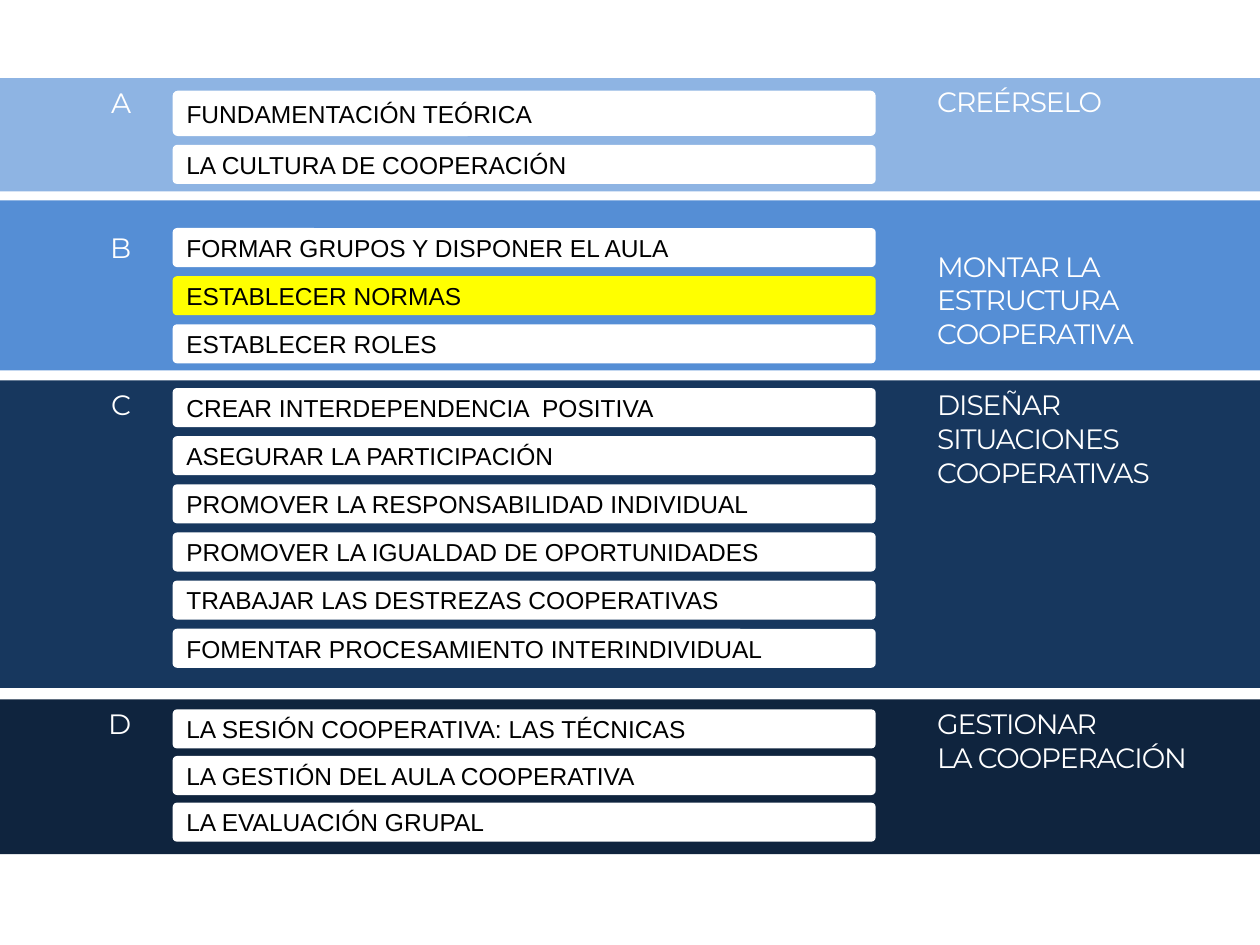
"""Build the slide of four cooperative learning stages, A to D."""
from pptx import Presentation
from pptx.dml.color import RGBColor
from pptx.enum.shapes import MSO_SHAPE as Kind
from pptx.enum.text import MSO_ANCHOR as Anchor, MSO_AUTO_SIZE as Fit, PP_ALIGN as Align
from pptx.util import Inches, Pt


def paint(fill, tone):
    fill.solid()
    fill.fore_color.rgb = RGBColor.from_string(tone)


def write(shape, lines, align, tone, track, frame, font):
    body = shape.text_frame
    for key, value in frame.items():
        setattr(body, key, value)
    for index, line in enumerate(lines):
        para = body.add_paragraph() if index else body.paragraphs[0]
        para.alignment = align
        run = para.add_run()
        run.text = line
        run._r.get_or_add_rPr().set("spc", str(track))
        for key, value in font.items():
            setattr(run.font, key, value)
        paint(run.font.fill, tone)


deck = Presentation()
deck.slide_width, deck.slide_height = Inches(10), Inches(7.5)
col, row = deck.slide_width / 100, deck.slide_height / 75
slide = deck.slides.add_slide(deck.slide_layouts[6])

head = {
    "frame": {"word_wrap": True, "auto_size": Fit.SHAPE_TO_FIT_TEXT},
    "font": {"name": "Montserrat", "size": Pt(16)},
    "tone": "FFFFFF", "track": -60,
}
item = {
    "frame": {"word_wrap": True, "vertical_anchor": Anchor.MIDDLE,
              "margin_right": Inches(0.24)},
    "font": {"name": "Arial", "size": Pt(14)},
    "tone": "000000", "track": 0,
}
mark = "ESTABLECER NORMAS"

bands = [
    {"name": "A", "top": 6.2, "tall": 9, "tone": "8EB4E3",
     "tag": 6.3, "side": 6.2, "start": 7.2, "first": 3.6, "gap": 0.7,
     "title": ["CREÉRSELO"],
     "items": ["FUNDAMENTACIÓN TEÓRICA", "LA CULTURA DE COOPERACIÓN"]},
    {"name": "B", "top": 15.9, "tall": 13.5, "tone": "558ED5",
     "tag": 17.8, "side": 19.3, "start": 18.1, "first": 3.1, "gap": 0.72,
     "title": ["MONTAR LA", "ESTRUCTURA", "COOPERATIVA"],
     "items": ["FORMAR GRUPOS Y DISPONER EL AULA", mark, "ESTABLECER ROLES"]},
    {"name": "C", "top": 30.2, "tall": 24.4, "tone": "17375E",
     "tag": 30.3, "side": 30.3, "start": 30.8, "first": 3.1, "gap": 0.72,
     "title": ["DISEÑAR", "SITUACIONES", "COOPERATIVAS"],
     "items": ["CREAR INTERDEPENDENCIA  POSITIVA", "ASEGURAR LA PARTICIPACIÓN",
               "PROMOVER LA RESPONSABILIDAD INDIVIDUAL",
               "PROMOVER LA IGUALDAD DE OPORTUNIDADES",
               "TRABAJAR LAS DESTREZAS COOPERATIVAS",
               "FOMENTAR PROCESAMIENTO INTERINDIVIDUAL"]},
    {"name": "D", "top": 55.5, "tall": 12.3, "tone": "0F243E",
     "tag": 55.6, "side": 55.6, "start": 56.3, "first": 3.1, "gap": 0.6,
     "title": ["GESTIONAR", "LA COOPERACIÓN"],
     "items": ["LA SESIÓN COOPERATIVA: LAS TÉCNICAS",
               "LA GESTIÓN DEL AULA COOPERATIVA", "LA EVALUACIÓN GRUPAL"]},
]

for band in bands:
    shapes = slide.shapes.add_group_shape().shapes
    top = band["start"]
    plates = [(Kind.ROUNDED_RECTANGLE, 0, -2, band["top"], 105.8, band["tall"],
               band["tone"], None)]
    for index, text in enumerate(band["items"]):
        tall = 3.1 if index else band["first"]
        tone = "FFFF00" if text == mark else "FFFFFF"
        plates.append((Kind.DOUBLE_BRACKET, 0.113, 13.7, top, 55.8, tall, tone, text))
        top += tall + band["gap"]

    for kind, bend, left, high, wide, tall, tone, text in plates:
        plate = shapes.add_shape(kind, int(left * col), int(high * row),
                                 int(wide * col), int(tall * row))
        plate.adjustments[0] = bend
        plate.shadow.inherit = False
        plate.line.fill.background()
        paint(plate.fill, tone)
        if text:
            write(plate, [text], Align.LEFT, **item)

    for lines, align, left, high, wide in [
        (band["title"], Align.LEFT, 73.4, band["side"], 26),
        ([band["name"]], Align.RIGHT, -2, band["tag"], 13.4),
    ]:
        tall = 1 + 2.7 * len(lines)
        box = shapes.add_textbox(int(left * col), int(high * row),
                                 int(wide * col), int(tall * row))
        write(box, lines, align, **head)

deck.save("out.pptx")
